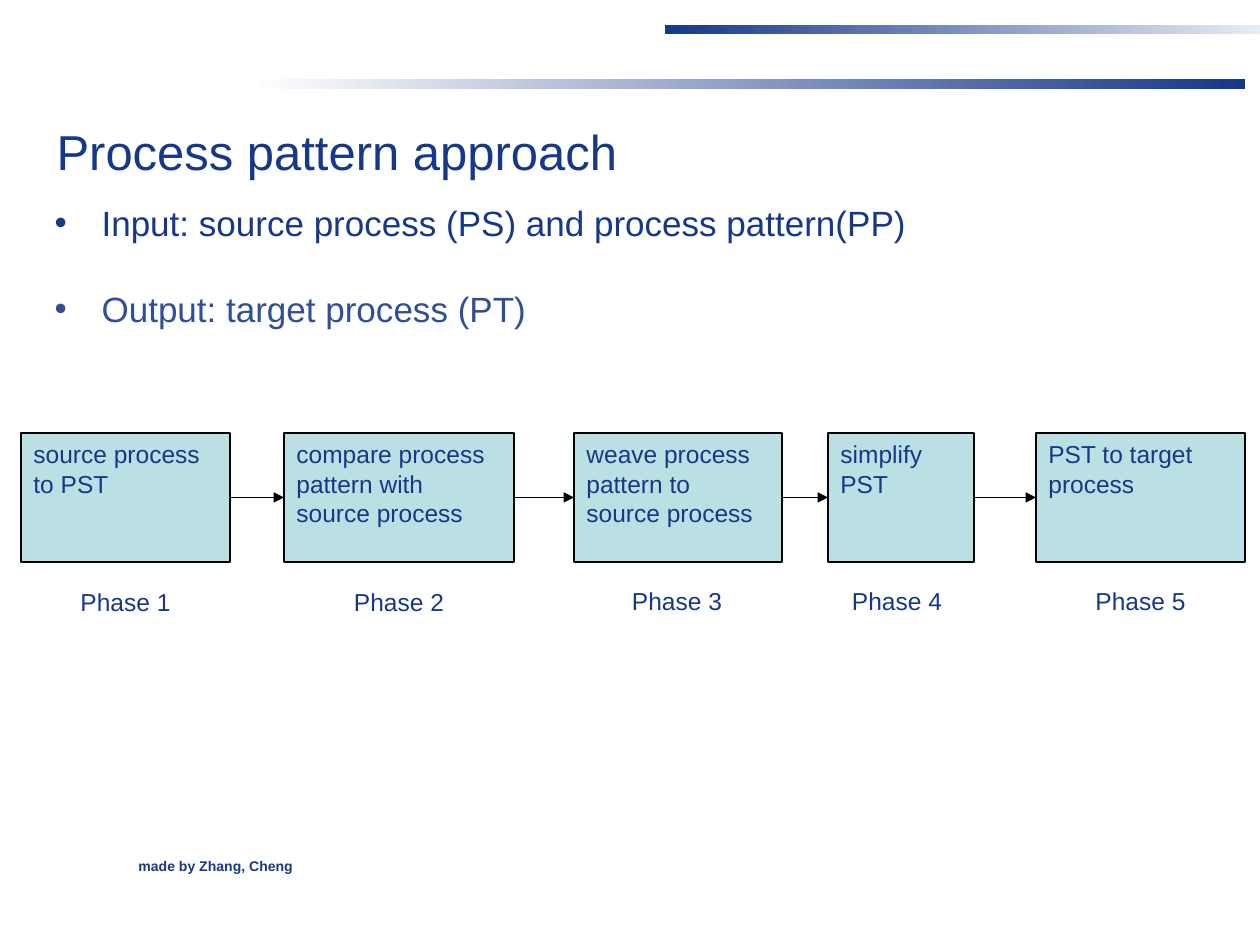
from lxml import etree
from pptx import Presentation, util as u
from pptx.dml.color import RGBColor
from pptx.enum import shapes, text
from pptx.oxml.ns import qn

NAVY, NAVY_LIGHT = "16388A", "304F97"
WHITE, PALE_GREY = "FFFFFF", "E7EBF3"
BLACK, PALE_TEAL = "000000", "BBE0E3"


def px(value):
    """Turn pixels (126 to the inch) into EMU."""
    return u.Emu(round(value * 914400 / 126))


def color(hex_string):
    return RGBColor.from_string(hex_string)


class SlideBuilder:
    font = "Arial"
    line_width = u.Pt(0.75)

    def __init__(self, slide):
        self.slide = slide

    def place(self, shape, left, top, width, height):
        shape.left, shape.top = px(left), px(top)
        shape.width, shape.height = px(width), px(height)

    def style(self, paragraph, size, hex_string=NAVY, bold=False,
              align=text.PP_ALIGN.LEFT):
        paragraph.alignment = align
        paragraph.font.name = self.font
        paragraph.font.size = u.Pt(size)
        paragraph.font.bold = bold
        paragraph.font.color.rgb = color(hex_string)

    def rectangle(self, *box):
        shape = self.slide.shapes.add_shape(
            shapes.MSO_SHAPE.RECTANGLE, *map(px, box))
        shape.shadow.inherit = False
        return shape

    def gradient_bar(self, box, start, end):
        bar = self.rectangle(*box)
        bar.line.fill.background()
        bar.fill.gradient()
        bar.fill.gradient_angle = 0
        for stop, position, shade in zip(bar.fill.gradient_stops, (0, 1), (start, end)):
            stop.position = position
            stop.color.rgb = color(shade)

    def title(self, words, *box):
        shape = self.slide.shapes.title
        self.place(shape, *box)
        frame = shape.text_frame
        frame.text = words
        frame.auto_size = text.MSO_AUTO_SIZE.NONE
        frame.vertical_anchor = text.MSO_ANCHOR.TOP
        self.style(frame.paragraphs[0], 28)

    def bullets(self, items, *box):
        shape = self.slide.placeholders[1]
        self.place(shape, *box)
        frame = shape.text_frame
        frame.auto_size = text.MSO_AUTO_SIZE.NONE
        frame.text = "\n".join(words for words, _ in items)
        for index, (paragraph, (_, shade)) in enumerate(zip(frame.paragraphs, items)):
            properties = paragraph._p.get_or_add_pPr()
            properties.set("marL", str(px(47)))
            properties.set("indent", str(px(-47)))
            etree.SubElement(properties, qn("a:buChar")).set("char", "•")
            paragraph.space_before = u.Pt(25 if index else 0)
            self.style(paragraph, 20, shade)

    def label(self, words, box, size=14, **options):
        shape = self.slide.shapes.add_textbox(*map(px, box))
        shape.text_frame.word_wrap = True
        shape.text_frame.text = words
        self.style(shape.text_frame.paragraphs[0], size, **options)

    def process_box(self, words, *box):
        shape = self.rectangle(*box)
        shape.fill.solid()
        shape.fill.fore_color.rgb = color(PALE_TEAL)
        shape.line.color.rgb = color(BLACK)
        shape.line.width = self.line_width
        frame = shape.text_frame
        frame.word_wrap = True
        frame.vertical_anchor = text.MSO_ANCHOR.TOP
        frame.text = words
        self.style(frame.paragraphs[0], 14)
        return shape

    def arrow(self, source, target):
        connector = self.slide.shapes.add_connector(
            shapes.MSO_CONNECTOR.STRAIGHT, 0, 0, 0, 0)
        connector.begin_connect(source, 3)
        connector.end_connect(target, 1)
        connector.line.color.rgb = color(BLACK)
        connector.line.width = self.line_width
        line = connector.line._get_or_add_ln()
        etree.SubElement(line, qn("a:tailEnd")).set("type", "triangle")
        etree.SubElement(connector._element.spPr, qn("a:effectLst"))


def main():
    presentation = Presentation()
    presentation.slide_width, presentation.slide_height = px(1260), px(945)
    slide = presentation.slides.add_slide(presentation.slide_layouts[1])
    builder = SlideBuilder(slide)

    # Header bars
    builder.gradient_bar((253, 79, 992, 10), WHITE, NAVY)
    builder.gradient_bar((665, 25, 595, 9), NAVY, PALE_GREY)

    # Title, list and footer
    builder.title("Process pattern approach", 44, 115, 1216, 72)
    builder.bullets([
        ("Input: source process (PS) and process pattern(PP)", NAVY),
        ("Output: target process (PT)", NAVY_LIGHT),
    ], 42, 195, 1218, 140)
    builder.label("made by Zhang, Cheng", (126, 851, 546, 63), size=8, bold=True)

    # Process phases: wording, box left, width, label left, label top
    phases = [
        ("source process to PST", 21, 209, 21, 581),
        ("compare process pattern with source process", 284, 230, 284, 581),
        ("weave process pattern to source process", 574, 208, 573, 580),
        ("simplify PST", 828, 146, 824, 580),
        ("PST to target process", 1036, 209, 1036, 580),
    ]
    boxes = []
    for number, (words, left, width, label_left, label_top) in enumerate(phases, 1):
        boxes.append(builder.process_box(words, left, 433, width, 129))
        builder.label(f"Phase {number}", (label_left, label_top, width, 43),
                      align=text.PP_ALIGN.CENTER)

    # Arrows between neighbouring phases
    for source, target in zip(boxes, boxes[1:]):
        builder.arrow(source, target)

    presentation.save("out.pptx")


if __name__ == "__main__":
    main()
